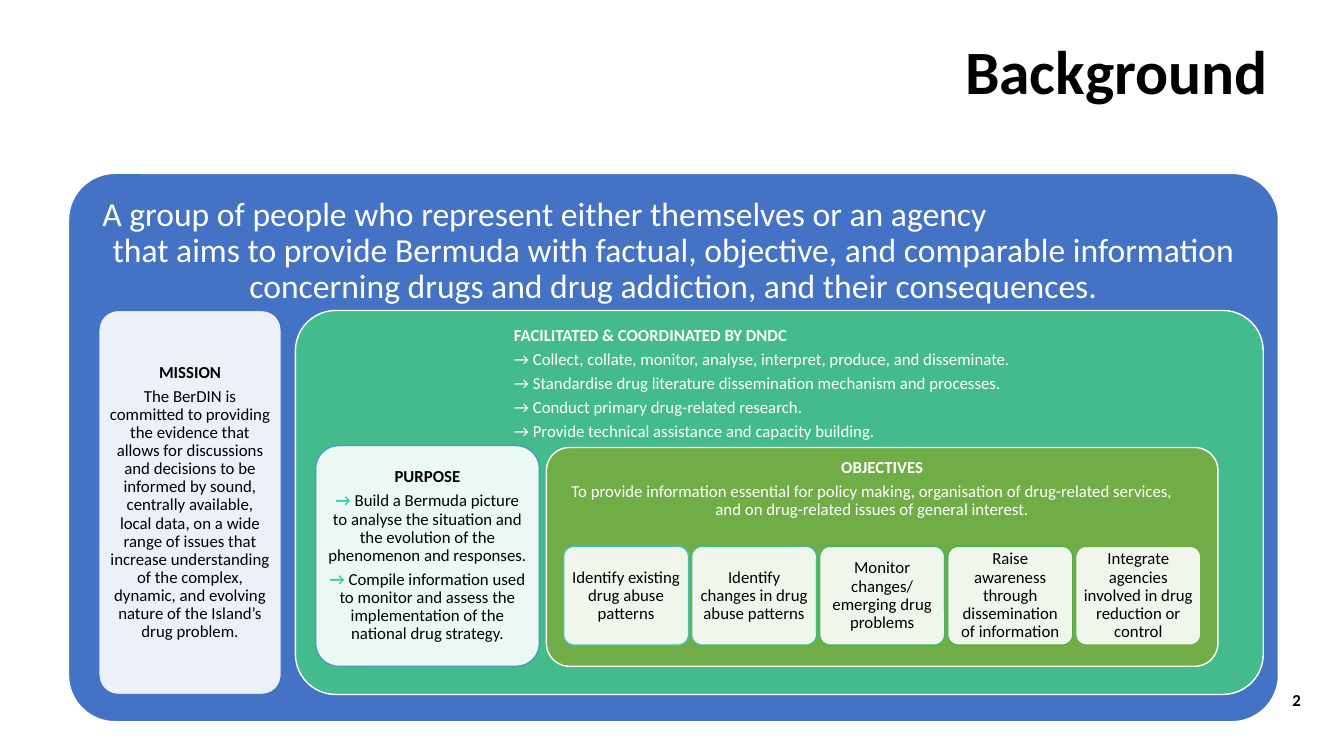
import pptx
import pptx.dml.color
import pptx.enum.shapes
import pptx.enum.text
import pptx.util
from lxml import etree

Inches = pptx.util.Inches
Pt = pptx.util.Pt
ALIGN = pptx.enum.text.PP_ALIGN
ANCHOR = pptx.enum.text.MSO_ANCHOR

FONT = "Calibri"
BLACK, WHITE = "000000", "FFFFFF"
BLUE, TEAL, GREEN, ARROW = "4472C4", "43BB8D", "70AD47", "31CFA9"

MISSION = (
    "The BerDIN is committed to providing the evidence that allows for "
    "discussions and decisions to be informed by sound, centrally available, "
    "local data, on a wide range of issues that increase understanding of the "
    "complex, dynamic, and evolving nature of the Island’s drug problem."
)
TASKS = [
    "→ Collect, collate, monitor, analyse, interpret, produce, and disseminate.",
    "→ Standardise drug literature dissemination mechanism and processes.",
    "→ Conduct primary drug-related research.",
    "→ Provide technical assistance and capacity building.",
]
PURPOSES = [
    "Build a Bermuda picture to analyse the situation and the evolution of the "
    "phenomenon and responses.",
    "Compile information used to monitor and assess the implementation of the "
    "national drug strategy.",
]
OBJECTIVES = [
    ("Identify existing drug abuse patterns", "43BEB9"),
    ("Identify changes in drug abuse patterns", TEAL),
    ("Monitor changes/ emerging drug problems", "45B664"),
    ("Raise awareness through dissemination of information", "4CB146"),
    ("Integrate agencies involved in drug reduction or control", GREEN),
]


def rgb(color):
    """Turn a hex string into a colour."""
    return pptx.dml.color.RGBColor.from_string(color)


def set_font(font, size, color, bold=False):
    """Format a font."""
    font.name, font.size, font.bold = FONT, Pt(size), bold
    font.color.rgb = rgb(color)


def add_card(s, box, fill, line, adj=0.105, alpha=100):
    """Add a rounded card and return its shape."""
    kind = pptx.enum.shapes.MSO_SHAPE.ROUNDED_RECTANGLE
    sp = s.shapes.add_shape(kind, *map(Inches, box))
    sp.shadow.inherit = False
    sp.adjustments[0] = adj
    sp.fill.solid()
    sp.fill.fore_color.rgb = rgb(fill)
    if alpha < 100:
        clr = sp.fill._xPr.find(".//" + pptx.oxml.ns.qn("a:srgbClr"))
        etree.SubElement(clr, pptx.oxml.ns.qn("a:alpha"), val=str(alpha * 1000))
    sp.line.color.rgb = rgb(line)
    sp.line.width = Pt(1)
    return sp


def set_frame(sp, anchor=ANCHOR.TOP, left=0.05, top=0.05, right=0.05, bottom=0.05):
    """Prepare a text frame and return it."""
    tf = sp.text_frame
    tf.word_wrap = True
    tf.vertical_anchor = anchor
    tf.margin_left, tf.margin_top = Inches(left), Inches(top)
    tf.margin_right, tf.margin_bottom = Inches(right), Inches(bottom)
    return tf


def add_text(tf, text, color, size=12, bold=False, align=ALIGN.CENTER, after=4.2):
    """Write the next paragraph of a frame and return it."""
    p = tf.paragraphs[0]
    if p.runs:
        p = tf.add_paragraph()
    p.alignment = align
    p.line_spacing = 0.9
    p.space_after = Pt(after)
    set_font(p.font, size, color, bold)
    p.add_run().text = text
    return p


def add_heading(s, box):
    """Place the slide title."""
    sp = s.shapes.title
    sp.left, sp.top, sp.width, sp.height = map(Inches, box)
    tf = set_frame(sp, ANCHOR.MIDDLE, 0.1, 0.05, 0.1)
    add_text(tf, "Background", BLACK, 44, True, ALIGN.RIGHT, 0)


def add_page_number(s, box):
    """Place the page number."""
    sp = s.shapes.add_textbox(*map(Inches, box))
    tf = set_frame(sp, ANCHOR.MIDDLE, 0.1, 0.05, 0.1)
    add_text(tf, "2", BLACK, 12, True, ALIGN.RIGHT, 0)


def add_mission(s, box):
    """Place the mission card."""
    tf = set_frame(add_card(s, box, WHITE, BLUE, alpha=90), ANCHOR.MIDDLE)
    add_text(tf, "MISSION", BLACK, bold=True)
    add_text(tf, MISSION, BLACK)


def add_purpose(s, box):
    """Place the purpose card with its arrowed points."""
    tf = set_frame(add_card(s, box, WHITE, "449BC1", alpha=90), ANCHOR.MIDDLE)
    add_text(tf, "PURPOSE", BLACK, bold=True)
    for purpose in PURPOSES:
        p = add_text(tf, "→ ", BLACK)
        set_font(p.runs[0].font, 12, ARROW, True)
        r = p.add_run()
        r.text = purpose
        set_font(r.font, 12, BLACK)


def add_objectives(s, box):
    """Place the objectives panel and its row of cards."""
    x, y, w, h = box
    tf = set_frame(add_card(s, box, GREEN, WHITE), bottom=1.23)
    add_text(tf, "OBJECTIVES", WHITE, bold=True)
    p = add_text(tf, "To provide information essential for policy making, "
                     "organisation of drug-related services,", WHITE)
    p._p.get_or_add_pPr().set("marR", str(Inches(0.2)))
    p.add_line_break()
    p.add_run().text = "and on drug-related issues of general interest."
    for i, (text, line) in enumerate(OBJECTIVES):
        cell = (x + 0.17 + 1.27 * i, y + 0.98, 1.24, 0.98)
        tf = set_frame(add_card(s, cell, WHITE, line, alpha=90), ANCHOR.MIDDLE)
        add_text(tf, text, BLACK)


def add_facilitation(s, box):
    """Place the coordination panel with purpose and objectives inside."""
    x, y, w, h = box
    tf = set_frame(add_card(s, box, TEAL, WHITE), left=2.05, bottom=2.42)
    add_text(tf, "FACILITATED & COORDINATED BY DNDC", WHITE, bold=True, align=ALIGN.LEFT)
    for task in TASKS:
        add_text(tf, task, WHITE, align=ALIGN.LEFT)
    add_purpose(s, (x + 0.2, y + 1.34, 2.22, 2.19))
    add_objectives(s, (x + 2.49, y + 1.36, 6.66, 2.17))


def add_group_panel(s, box):
    """Place the outer panel and everything nested in it."""
    x, y, w, h = box
    sp = add_card(s, box, BLUE, WHITE, adj=0.085)
    tf = set_frame(sp, left=0.2, top=0.1, right=0.2, bottom=4.22)
    add_text(tf, "A group of people who represent either themselves or an agency",
             WHITE, 24, align=ALIGN.LEFT, after=0)
    add_text(tf, "that aims to provide Bermuda with factual, objective, and "
                 "comparable information concerning drugs and drug addiction, "
                 "and their consequences.", WHITE, 24, after=0)
    add_mission(s, (x + 0.3, y + 1.36, 1.81, 3.81))
    add_facilitation(s, (x + 2.25, y + 1.36, 9.6, 3.81))


def main():
    """Build and save the slide."""
    prs = pptx.Presentation()
    prs.slide_width, prs.slide_height = Inches(13.33), Inches(7.5)
    s = prs.slides.add_slide(prs.slide_layouts[5])
    add_heading(s, (4.66, 0.24, 8.02, 1))
    add_group_panel(s, (0.68, 1.72, 12, 5.44))
    add_page_number(s, (10.42, 6.76, 2.58, 0.4))
    prs.save("out.pptx")


if __name__ == "__main__":
    main()
